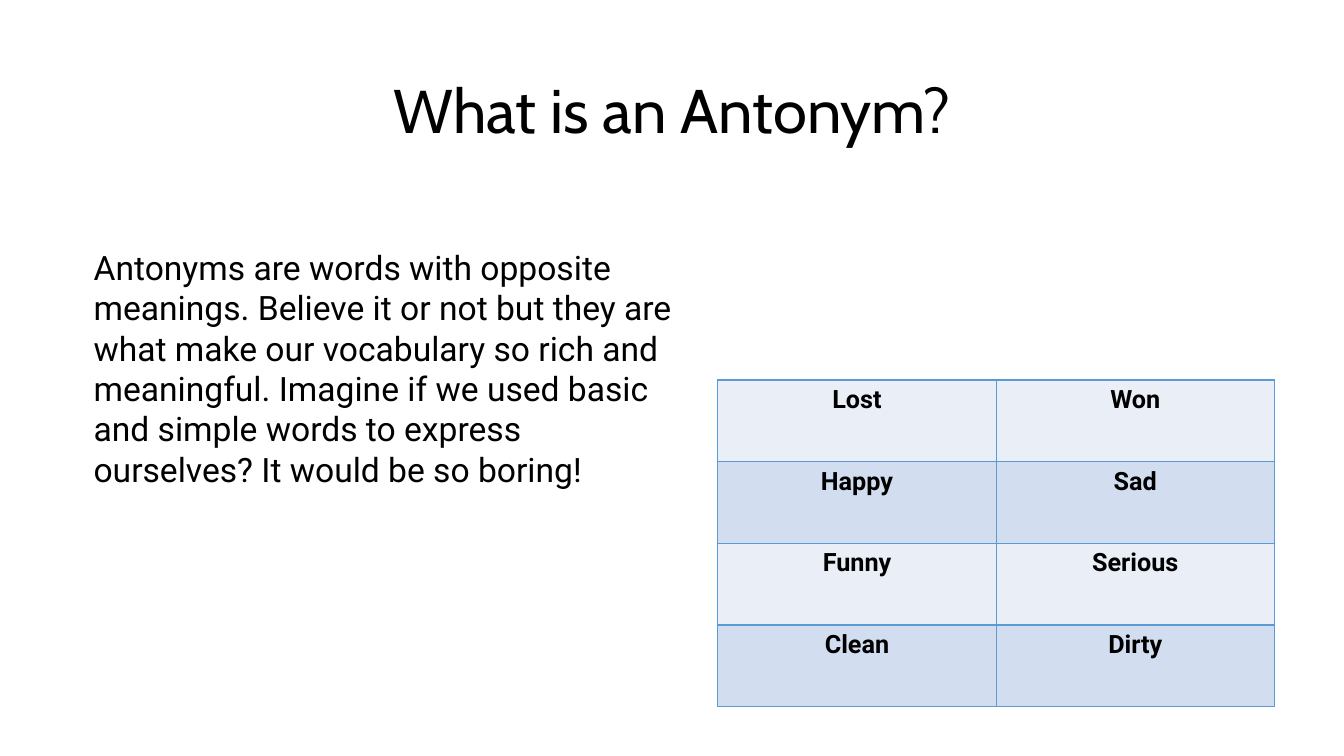
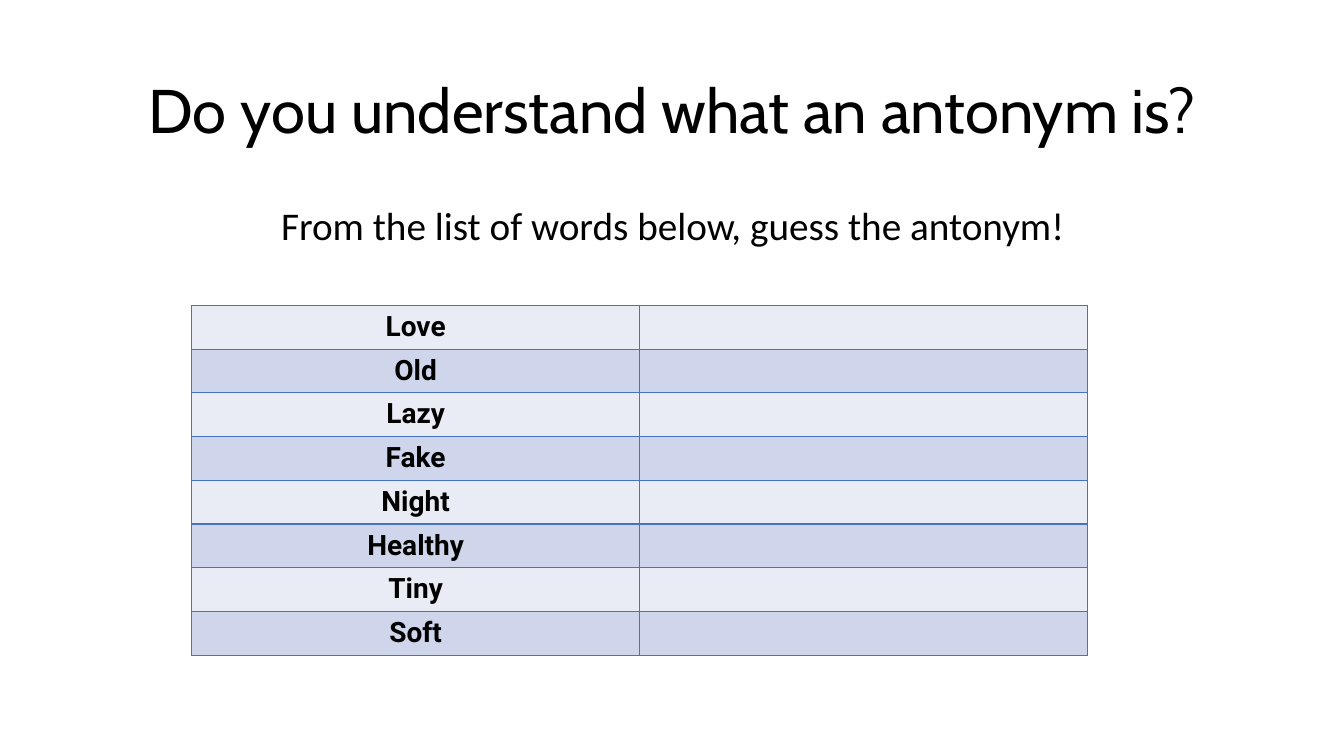
"""Build two slides that explain and practise antonyms."""
from lxml.etree import SubElement
from pptx import Presentation
from pptx.dml.color import RGBColor
from pptx.enum.text import MSO_ANCHOR as Anchor, MSO_AUTO_SIZE as AutoSize, PP_ALIGN as Align
from pptx.oxml import parse_xml
from pptx.oxml.ns import nsdecls, qn
from pptx.util import Inches, Pt

BLACK, WHITE = "000000", "FFFFFF"
TITLE = {"name": "Cabin", "size": Pt(44), "bold": False}
BODY = {"name": "Roboto", "size": Pt(24)}
PROMPT = {"name": "Calibri", "size": Pt(28)}
CENTERED = {"alignment": Align.CENTER}
TIGHT = {"alignment": Align.CENTER, "line_spacing": 0.9}
MARGIN, CONTENT_WIDTH = 0.92, 11.5

slides = [
    {
        "title": "What is an Antonym?",
        "text": "Antonyms are words with opposite meanings. Believe it or not but they are "
                "what make our vocabulary so rich and meaningful. Imagine if we used basic "
                "and simple words to express ourselves? It would be so boring!",
        "text_place": (0.83, 2.4, 6.01, 2.93),
        "text_font": BODY,
        "text_layout": {"alignment": Align.LEFT},
        "text_filled": True,
        "pairs": [("Lost", "Won"), ("Happy", "Sad"), ("Funny", "Serious"), ("Clean", "Dirty")],
        "table_place": (7.12, 3.77, 5.52, 3.25),
        "row_height": 0.81,
        "word_size": 18,
        "bands": ("EAEFF7", "D2DEEF"),
        "border": "5B9BD5",
    },
    {
        "title": "Do you understand what an antonym is?",
        "text": "From the list of words below, guess the antonym!",
        "text_place": (MARGIN, 2, CONTENT_WIDTH, 0.59),
        "text_font": PROMPT,
        "text_layout": TIGHT,
        "text_filled": False,
        "pairs": [(word, "") for word in
                  ("Love", "Old", "Lazy", "Fake", "Night", "Healthy", "Tiny", "Soft")],
        "table_place": (1.9, 3.03, 8.89, 3.47),
        "row_height": 0.41,
        "word_size": 20,
        "bands": ("E9EBF5", "CFD5EA"),
        "border": "4472C4",
    },
]


def paint(fill, color, alpha=None):
    fill.solid()
    fill.fore_color.rgb = RGBColor.from_string(color)
    if alpha:
        tint = fill._xPr.find(".//" + qn("a:srgbClr"))
        SubElement(tint, qn("a:alpha"), val=str(alpha * 1000))


def write(frame, text, font, layout):
    para = frame.paragraphs[0]
    span = para.add_run()
    span.text = text
    for target, values in ((para, layout), (span.font, font)):
        for name, value in values.items():
            setattr(target, name, value)
    span.font.color.rgb = RGBColor.from_string(BLACK)


deck = Presentation()
deck.slide_width, deck.slide_height = Inches(13.33), Inches(7.5)

for content in slides:
    page = deck.slides.add_slide(deck.slide_layouts[5])
    paint(page.background.fill, WHITE)

    title = page.shapes.title
    title.left, title.top, title.width, title.height = map(
        Inches, (MARGIN, 0.4, CONTENT_WIDTH, 1.45))
    paint(title.fill, WHITE, alpha=50)
    title.text_frame.auto_size = AutoSize.NONE
    title.text_frame.vertical_anchor = Anchor.MIDDLE
    write(title.text_frame, content["title"], TITLE, TIGHT)

    box = page.shapes.add_textbox(*map(Inches, content["text_place"]))
    box.text_frame.word_wrap = True
    if content["text_filled"]:
        paint(box.fill, WHITE, alpha=50)
    write(box.text_frame, content["text"], content["text_font"], content["text_layout"])

    pairs = content["pairs"]
    table = page.shapes.add_table(len(pairs), 2, *map(Inches, content["table_place"])).table
    table.first_row = table.horz_banding = False
    word_font = {"name": "Roboto", "size": Pt(content["word_size"]), "bold": True}
    for index, pair in enumerate(pairs):
        table.rows[index].height = Inches(content["row_height"])
        for column, word in enumerate(pair):
            cell = table.cell(index, column)
            paint(cell.fill, content["bands"][index % 2])
            if word:
                write(cell.text_frame, word, word_font, CENTERED)
            for position, side in enumerate(("lnL", "lnR", "lnT", "lnB")):
                line = parse_xml(
                    f'<a:{side} {nsdecls("a")} w="{Pt(1)}"><a:solidFill>'
                    f'<a:srgbClr val="{content["border"]}"/></a:solidFill></a:{side}>')
                cell._tc.get_or_add_tcPr().insert(position, line)

deck.save("out.pptx")
